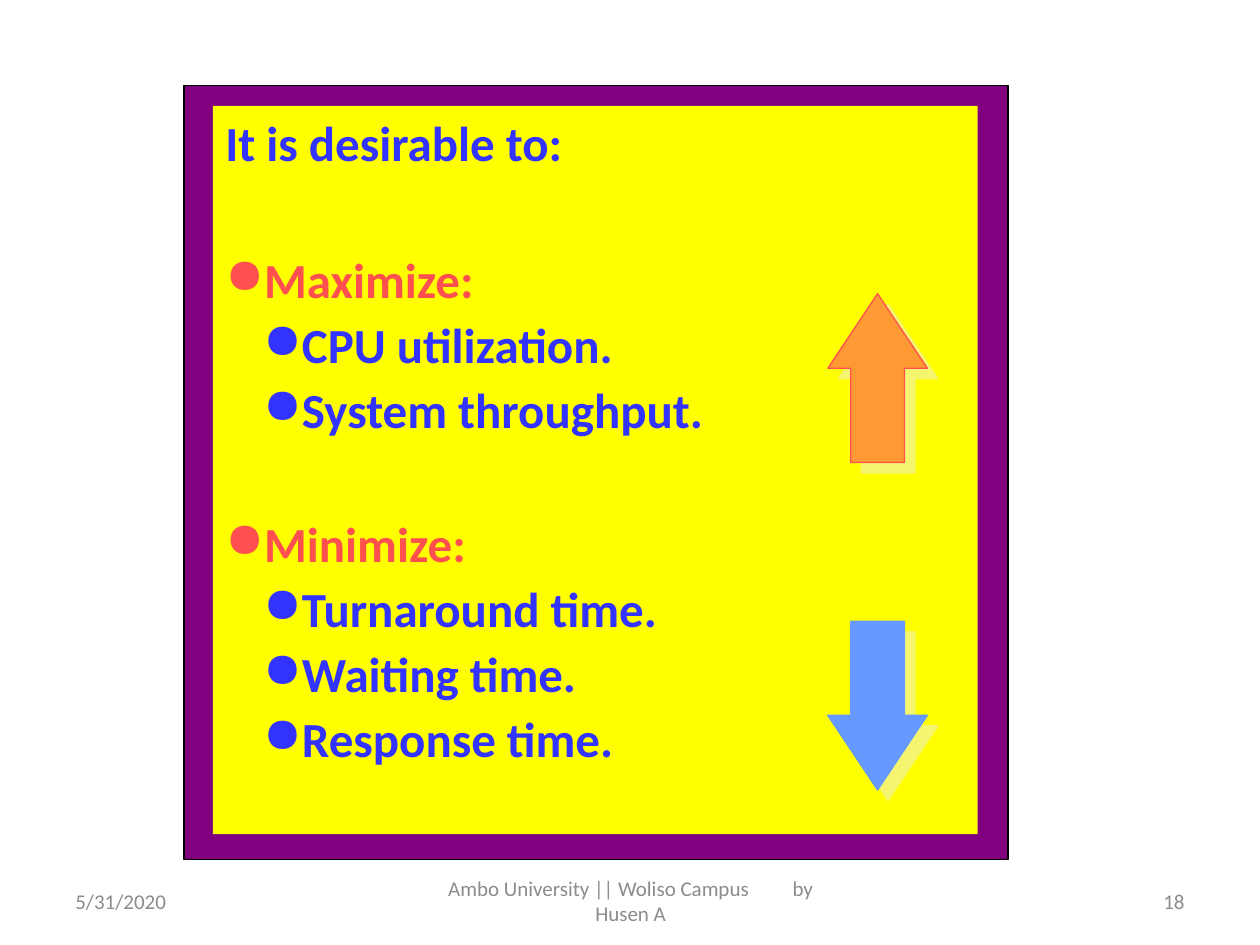
import dataclasses

import lxml.etree
import pptx
import pptx.dml.color
import pptx.enum.shapes
import pptx.enum.text
import pptx.oxml.ns
import pptx.util

Shape = pptx.enum.shapes.MSO_SHAPE
Align = pptx.enum.text.PP_ALIGN
Anchor = pptx.enum.text.MSO_ANCHOR
qn = pptx.oxml.ns.qn

WIDTH = pptx.util.Inches(10)
HEIGHT = pptx.util.Inches(7.5)
FONT = "Calibri"
BLUE, RED, GREY = "3333FF", "FF5050", "8C8C8C"


@dataclasses.dataclass
class Box:
    """Left, top, width and height in percent of the slide."""
    x: float
    y: float
    w: float
    h: float

    def place(self) -> tuple[int, ...]:
        sides = (WIDTH, HEIGHT, WIDTH, HEIGHT)
        shares = (self.x, self.y, self.w, self.h)
        return tuple(round(side * share / 100) for side, share in zip(sides, shares))


@dataclasses.dataclass
class Line:
    text: str
    color: str = BLUE
    level: int = 1
    before: float = 3.5
    bullet: bool = True


@dataclasses.dataclass
class Arrow:
    top: float
    turn: int
    fill: str
    edge: str


@dataclasses.dataclass
class Footer:
    box: Box
    words: tuple[str, ...]
    align: Align


LINES = [
    Line("It is desirable to:", level=0, before=0, bullet=False),
    Line("Maximize:", RED, 0, 45),
    Line("CPU utilization."),
    Line("System throughput."),
    Line("Minimize:", RED, 0, 43),
    Line("Turnaround time."),
    Line("Waiting time."),
    Line("Response time."),
]
ARROWS = [
    Arrow(31.07, 0, "FF9933", RED),
    Arrow(65.73, 180, "6699FF", "6699FF"),
]
FOOTERS = [
    Footer(Box(5, 92.67, 23.3, 5.33), ("5/31/2020",), Align.LEFT),
    Footer(Box(34.2, 92.67, 31.7, 5.33),
           ("Ambo University || Woliso Campus", " ", "by Husen A"), Align.CENTER),
    Footer(Box(71.7, 92.67, 23.3, 5.33), ("18",), Align.RIGHT),
]


def paint(color: str) -> pptx.dml.color.RGBColor:
    return pptx.dml.color.RGBColor.from_string(color)


def style(run, size: float, color: str, bold: bool = False) -> None:
    run.font.name = FONT
    run.font.size = pptx.util.Pt(size)
    run.font.bold = bold
    run.font.color.rgb = paint(color)


def draw_shape(slide, kind: Shape, box: Box, fill: str, edge: str | None = None):
    shape = slide.shapes.add_shape(kind, *box.place())
    shape.shadow.inherit = False
    shape.fill.solid()
    shape.fill.fore_color.rgb = paint(fill)
    if edge:
        shape.line.color.rgb = paint(edge)
        shape.line.width = pptx.util.Pt(0.75)
    else:
        shape.line.fill.background()
    return shape


def add_line(para, line: Line) -> None:
    para.text = line.text
    para.alignment = Align.LEFT
    para.level = line.level
    para.space_before = pptx.util.Pt(line.before)
    style(para.runs[0], 28, line.color, bold=True)
    props = para._p.get_or_add_pPr()
    props.set("marL", str(pptx.util.Inches(0.3 * (line.level + 1))))
    props.set("indent", str(pptx.util.Inches(-0.3)))
    if line.bullet:
        lxml.etree.SubElement(props, qn("a:buChar"), char="●")
    else:
        lxml.etree.SubElement(props, qn("a:buNone"))


def draw_panel(slide) -> None:
    draw_shape(slide, Shape.RECTANGLE, Box(14.6, 9.07, 65.4, 81.87), "800080", "000000")
    panel = draw_shape(slide, Shape.RECTANGLE, Box(16.9, 11.2, 60.7, 77.07), "FFFF00")
    frame = panel.text_frame
    frame.word_wrap = True
    frame.vertical_anchor = Anchor.TOP
    for index, line in enumerate(LINES):
        para = frame.add_paragraph() if index else frame.paragraphs[0]
        add_line(para, line)


def draw_arrow(slide, arrow: Arrow) -> None:
    box = Box(65.7, arrow.top, 7.9, 17.87)
    shape = draw_shape(slide, Shape.UP_ARROW, box, arrow.fill, arrow.edge)
    shape.rotation = arrow.turn
    shape.adjustments[0] = 0.54
    shape.adjustments[1] = 0.75
    effects = shape._element.spPr.find(qn("a:effectLst"))
    shadow = lxml.etree.SubElement(
        effects, qn("a:outerShdw"), dist=str(pptx.util.Pt(8.5)),
        dir=str(45 * 60000), algn="ctr", rotWithShape="0")
    color = lxml.etree.SubElement(shadow, qn("a:srgbClr"), val="EEECE1")
    lxml.etree.SubElement(color, qn("a:alpha"), val="50000")


def draw_footer(slide, footer: Footer) -> None:
    """A word that is a single space is tracked out into a wide gap."""
    frame = slide.shapes.add_textbox(*footer.box.place()).text_frame
    frame.word_wrap = True
    frame.vertical_anchor = Anchor.MIDDLE
    para = frame.paragraphs[0]
    para.alignment = footer.align
    for word in footer.words:
        run = para.add_run()
        run.text = word
        style(run, 12, GREY)
        if word == " ":
            run._r.get_or_add_rPr().set("spc", "2200")


def main() -> None:
    deck = pptx.Presentation()
    deck.slide_width, deck.slide_height = WIDTH, HEIGHT
    slide = deck.slides.add_slide(deck.slide_layouts[6])
    draw_panel(slide)
    for arrow in ARROWS:
        draw_arrow(slide, arrow)
    for footer in FOOTERS:
        draw_footer(slide, footer)
    deck.save("out.pptx")


if __name__ == "__main__":
    main()
